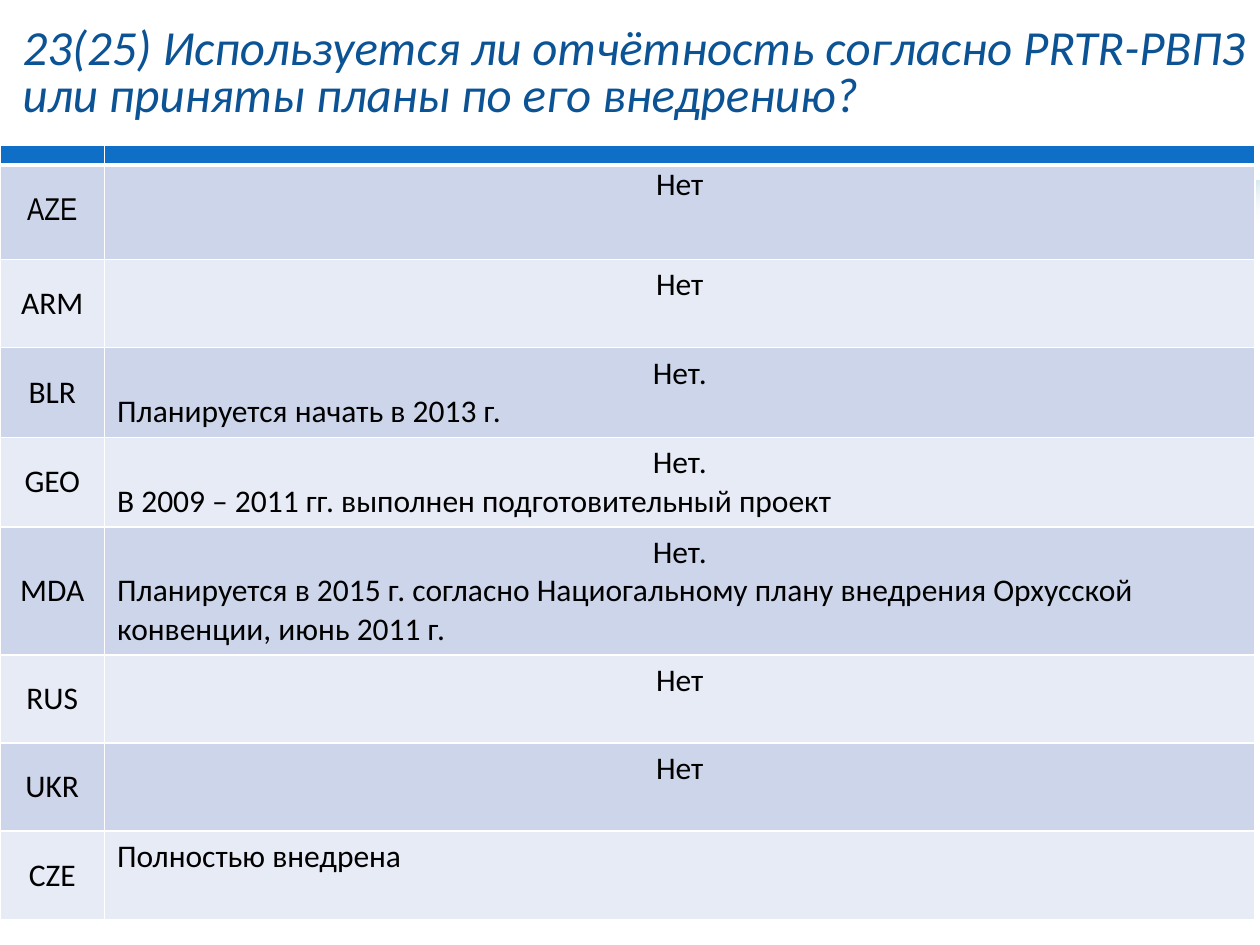
from lxml.etree import SubElement
from pptx import Presentation
from pptx.dml.color import RGBColor
from pptx.enum.shapes import MSO_SHAPE
from pptx.enum.text import MSO_ANCHOR, MSO_AUTO_SIZE, PP_ALIGN
from pptx.oxml.ns import qn
from pptx.util import Inches, Pt

WIDTH, HEIGHT = Inches(10), Inches(7.5)
WHITE = RGBColor(0xFF, 0xFF, 0xFF)
BLACK = RGBColor(0, 0, 0)
TITLE_BLUE = RGBColor(0x0B, 0x53, 0x94)
HEADER_BLUE = RGBColor(0x0F, 0x6F, 0xC6)
BAND_DARK = RGBColor(0xCC, 0xD5, 0xEA)
BAND_LIGHT = RGBColor(0xE7, 0xEB, 0xF5)
SHADOW_BLUE = RGBColor(0x00, 0x76, 0xA3)

TITLE = ("23(25) Используется ли отчётность согласно PRTR-РВПЗ "
         "или приняты планы по его внедрению?")
# Country code, centred verdict, left-aligned detail
ANSWERS = [
    ("AZE", "Нет", ""),
    ("ARM", "Нет", ""),
    ("BLR", "Нет.", "Планируется начать в 2013 г."),
    ("GEO", "Нет.", "В 2009 – 2011 гг. выполнен подготовительный проект"),
    ("MDA", "Нет.", "Планируется в 2015 г. согласно Нациогальному плану "
                    "внедрения Орхусской конвенции, июнь 2011 г."),
    ("RUS", "Нет", ""),
    ("UKR", "Нет", ""),
    ("CZE", "", "Полностью внедрена"),
]
COLUMN_WIDTHS = (Inches(0.83), Inches(9.13))
HEADER_HEIGHT, FIRST_HEIGHT, ROW_HEIGHT = Inches(0.16), Inches(0.75), Inches(0.7)


def add_run(paragraph, text, size, color, font="Calibri", italic=None):
    run = paragraph.add_run()
    run.text = text
    run.font.name = font
    run.font.size = Pt(size)
    run.font.italic = italic
    run.font.color.rgb = color


def add_backdrop(slide):
    """Put the white wavy panel with its soft shadow behind everything."""
    panel = slide.shapes.add_shape(MSO_SHAPE.FLOWCHART_DOCUMENT,
                                   0, 0, WIDTH, Inches(1.78))
    panel.fill.solid()
    panel.fill.fore_color.rgb = WHITE
    panel.line.fill.background()
    panel.shadow.inherit = False
    effects = panel._element.spPr.find(qn("a:effectLst"))
    shadow = SubElement(effects, qn("a:outerShdw"), blurRad=str(Pt(22)),
                        dist=str(Pt(3)), dir="5400000", rotWithShape="0")
    color = SubElement(shadow, qn("a:srgbClr"), val=str(SHADOW_BLUE))
    SubElement(color, qn("a:alpha"), val="40000")
    slide.shapes._spTree.insert(2, panel._element)


def format_title(title):
    title.left, title.top = Inches(0.08), Inches(0.13)
    title.width, title.height = Inches(9.92), Inches(0.93)
    frame = title.text_frame
    frame.word_wrap = True
    frame.auto_size = MSO_AUTO_SIZE.NONE
    frame.vertical_anchor = MSO_ANCHOR.MIDDLE
    paragraph = frame.paragraphs[0]
    paragraph.alignment = PP_ALIGN.LEFT
    paragraph.line_spacing = 0.8
    add_run(paragraph, TITLE, 28, TITLE_BLUE, italic=True)


def style_cell(cell, color, bottom=1, top=1):
    """Give the cell white borders, widths in points, and a fill."""
    properties = cell._tc.get_or_add_tcPr()
    for side, width in (("L", 1), ("R", 1), ("T", top), ("B", bottom)):
        border = SubElement(properties, qn(f"a:ln{side}"), w=str(Pt(width)))
        fill = SubElement(border, qn("a:solidFill"))
        SubElement(fill, qn("a:srgbClr"), val=str(WHITE))
    cell.fill.solid()
    cell.fill.fore_color.rgb = color


def fill_header(cell):
    style_cell(cell, HEADER_BLUE, bottom=3)
    cell.margin_top = cell.margin_bottom = 0
    SubElement(cell.text_frame.paragraphs[0]._p, qn("a:endParaRPr"), sz="800")


def fill_country(cell, code, font):
    cell.vertical_anchor = MSO_ANCHOR.MIDDLE
    paragraph = cell.text_frame.paragraphs[0]
    paragraph.alignment = PP_ALIGN.CENTER
    add_run(paragraph, code, 18, BLACK, font)


def fill_answer(cell, verdict, detail):
    frame = cell.text_frame
    lines = [(verdict, PP_ALIGN.CENTER), (detail, PP_ALIGN.LEFT)]
    for i, (text, alignment) in enumerate(line for line in lines if line[0]):
        paragraph = frame.add_paragraph() if i else frame.paragraphs[0]
        paragraph.alignment = alignment
        add_run(paragraph, text, 18, BLACK)


def add_answers(slide):
    table = slide.shapes.add_table(len(ANSWERS) + 1, 2, 0, Inches(1.15),
                                   sum(COLUMN_WIDTHS), Inches(6.12)).table
    for column, width in zip(table.columns, COLUMN_WIDTHS):
        column.width = width
    heights = [HEADER_HEIGHT, FIRST_HEIGHT] + [ROW_HEIGHT] * (len(ANSWERS) - 1)
    for row, height in zip(table.rows, heights):
        row.height = height
    for cell in table.rows[0].cells:
        fill_header(cell)
    for number, (code, verdict, detail) in enumerate(ANSWERS, 1):
        first = number == 1
        country, answer = table.rows[number].cells
        for cell in (country, answer):
            style_cell(cell, BAND_DARK if number % 2 else BAND_LIGHT,
                       top=3 if first else 1)
        fill_country(country, code, "Arial Narrow" if first else "Calibri")
        fill_answer(answer, verdict, detail)
        if first:
            answer.margin_left = answer.margin_right = Inches(0.02)
            answer.margin_top = answer.margin_bottom = 0


def main():
    deck = Presentation()
    deck.slide_width, deck.slide_height = WIDTH, HEIGHT
    slide = deck.slides.add_slide(deck.slide_layouts[5])
    add_backdrop(slide)
    format_title(slide.shapes.title)
    add_answers(slide)
    deck.save("out.pptx")


if __name__ == "__main__":
    main()
